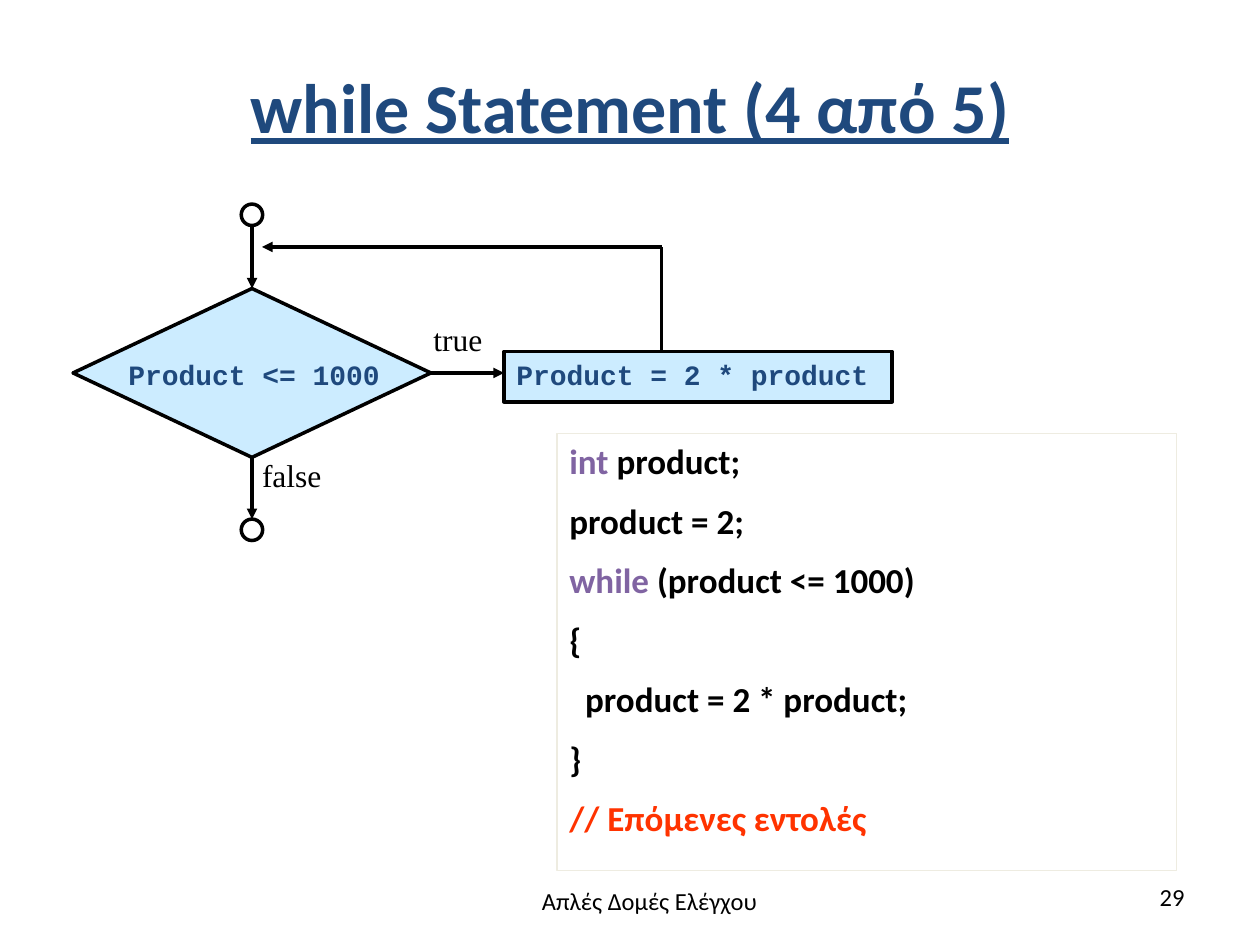
from dataclasses import dataclass
from typing import Optional

from lxml.etree import SubElement
from pptx import Presentation
from pptx.dml.color import RGBColor
from pptx.enum.shapes import MSO_CONNECTOR, MSO_SHAPE
from pptx.enum.text import MSO_ANCHOR as Anchor, MSO_AUTO_SIZE as AutoSize, PP_ALIGN as Align
from pptx.oxml.ns import qn
from pptx.util import Inches, Pt

COLORS = {
    "ink": "000000", "paper": "FFFFFF", "navy": "1F497D", "node": "CCECFF",
    "keyword": "8064A2", "comment": "FF3300", "frame": "EEECE1",
}
CODE = [
    [("int ", "keyword"), ("product;", "ink")],
    [("product = 2;", "ink")],
    [("while ", "keyword"), ("(product <= 1000)", "ink")],
    [("{", "ink")],
    [("  product = 2 * product;", "ink")],
    [("}", "ink")],
    [("// Επόμενες εντολές", "comment")],
]
AXIS, FLOW_Y, LOOP_X, LOOP_Y = 2.0, 2.96, 5.25, 1.96
DOT, HALF_W, HALF_H = 0.17, 1.42, 0.67


@dataclass(frozen=True)
class Style:
    """Look of a run of text."""
    font: str
    size: int
    color: str = "ink"
    bold: bool = False
    underline: bool = False


@dataclass(frozen=True)
class Label:
    """Free-standing text."""
    text: str
    box: tuple[float, float, float, float]
    style: Style
    align: Align = Align.LEFT
    anchor: Anchor = Anchor.TOP
    wrap: bool = True
    inset: bool = True


@dataclass(frozen=True)
class Node:
    """Outlined shape of the flowchart or the code frame."""
    kind: MSO_SHAPE
    box: tuple[float, float, float, float]
    fill: Optional[str] = "node"
    line: str = "ink"
    width: float = 2


@dataclass(frozen=True)
class Link:
    """Straight line between two points, with optional joined ends."""
    start: tuple[float, float]
    end: tuple[float, float]
    arrow: bool = True
    begin_at: Optional[tuple[str, int]] = None
    end_at: Optional[tuple[str, int]] = None


CODE_STYLE = Style("Calibri", 20, bold=True)
NODE_STYLE = Style("Courier New", 16, "navy", bold=True)
BRANCH = Style("Times New Roman", 18)
FOOTER = Style("Calibri", 14)

NODES = {
    "start": Node(MSO_SHAPE.OVAL, (AXIS - DOT / 2, 1.62, DOT, DOT), "paper"),
    "stop": Node(MSO_SHAPE.OVAL, (AXIS - DOT / 2, 4.12, DOT, DOT), "paper"),
    "test": Node(MSO_SHAPE.DIAMOND, (AXIS - HALF_W, FLOW_Y - HALF_H, 2 * HALF_W, 2 * HALF_H)),
    "step": Node(MSO_SHAPE.RECTANGLE, (4, 2.79, 3.08, 0.4)),
    "code": Node(MSO_SHAPE.RECTANGLE, (4.42, 3.44, 4.92, 3.47), None, "frame", 0.75),
}
LINKS = [
    Link((AXIS, 1.79), (AXIS, FLOW_Y - HALF_H), end_at=("test", 0)),
    Link((AXIS, FLOW_Y + HALF_H), (AXIS, 4.12), begin_at=("test", 2), end_at=("stop", 0)),
    Link((AXIS + HALF_W, FLOW_Y), (4, FLOW_Y), begin_at=("test", 3)),
    Link((LOOP_X, 2.79), (LOOP_X, LOOP_Y), arrow=False),
    Link((LOOP_X, LOOP_Y), (2.08, LOOP_Y)),
]
LABELS = [
    Label("while Statement (4 από 5)", (0.5, 0.13, 9, 1.42),
          Style("Calibri", 40, "navy", True, True), Align.CENTER, Anchor.MIDDLE),
    Label("true", (3.44, 2.54, 0.42, 0.3), BRANCH, wrap=False, inset=False),
    Label("false", (2.08, 3.62, 0.5, 0.3), BRANCH, wrap=False, inset=False),
    Label("Product <= 1000", (0.92, 2.79, 2.21, 0.37), NODE_STYLE, wrap=False),
    Label("Απλές Δομές Ελέγχου", (3.41, 6.98, 3.49, 0.4), FOOTER, Align.CENTER),
    Label("29", (7.17, 6.95, 2.33, 0.4), FOOTER, Align.RIGHT),
]


def rgb(name: str) -> RGBColor:
    """Look up a colour."""
    return RGBColor.from_string(COLORS[name])


def style_run(r, style: Style, color: Optional[str] = None) -> None:
    """Apply a style to a run."""
    r.font.name, r.font.size = style.font, Pt(style.size)
    r.font.bold, r.font.underline = style.bold, style.underline
    r.font.color.rgb = rgb(color or style.color)


def add_label(s, label: Label) -> None:
    """Draw a text box."""
    tf = s.shapes.add_textbox(*map(Inches, label.box)).text_frame
    tf.word_wrap, tf.vertical_anchor = label.wrap, label.anchor
    if not label.wrap:
        tf.auto_size = AutoSize.SHAPE_TO_FIT_TEXT
    if not label.inset:
        tf.margin_left = tf.margin_right = tf.margin_top = tf.margin_bottom = 0
    tf.text = label.text
    p = tf.paragraphs[0]
    p.alignment = label.align
    style_run(p.runs[0], label.style)


def add_node(s, node: Node):
    """Draw an outlined shape."""
    sp = s.shapes.add_shape(node.kind, *map(Inches, node.box))
    sp.shadow.inherit = False
    if node.fill:
        sp.fill.solid()
        sp.fill.fore_color.rgb = rgb(node.fill)
    else:
        sp.fill.background()
    sp.line.color.rgb, sp.line.width = rgb(node.line), Pt(node.width)
    return sp


def add_link(s, link: Link, shapes: dict) -> None:
    """Draw a line, joined and arrowed as asked."""
    c = s.shapes.add_connector(MSO_CONNECTOR.STRAIGHT, *map(Inches, link.start + link.end))
    if link.begin_at:
        c.begin_connect(shapes[link.begin_at[0]], link.begin_at[1])
    if link.end_at:
        c.end_connect(shapes[link.end_at[0]], link.end_at[1])
    c.line.color.rgb, c.line.width = rgb("ink"), Pt(2)
    if link.arrow:
        SubElement(c.line._get_or_add_ln(), qn("a:tailEnd"), type="triangle")
    SubElement(c._element.spPr, qn("a:effectLst"))


def write_lines(sp, lines: list, style: Style) -> None:
    """Fill a shape with left-aligned coloured lines."""
    tf = sp.text_frame
    tf.word_wrap, tf.vertical_anchor = True, Anchor.TOP
    for i, parts in enumerate(lines):
        p = tf.add_paragraph() if i else tf.paragraphs[0]
        p.alignment = Align.LEFT
        p.space_before = Pt(style.size / 2 if i else 0)
        for text, color in parts:
            r = p.add_run()
            r.text = text
            style_run(r, style, color)


def main() -> None:
    """Build the slide and save it."""
    prs = Presentation()
    prs.slide_width, prs.slide_height = Inches(10), Inches(7.5)
    s = prs.slides.add_slide(prs.slide_layouts[6])
    shapes = {name: add_node(s, node) for name, node in NODES.items()}
    for link in LINKS:
        add_link(s, link, shapes)
    write_lines(shapes["step"], [[("Product = 2 * product", "navy")]], NODE_STYLE)
    write_lines(shapes["code"], CODE, CODE_STYLE)
    for label in LABELS:
        add_label(s, label)
    prs.save("out.pptx")


if __name__ == "__main__":
    main()
